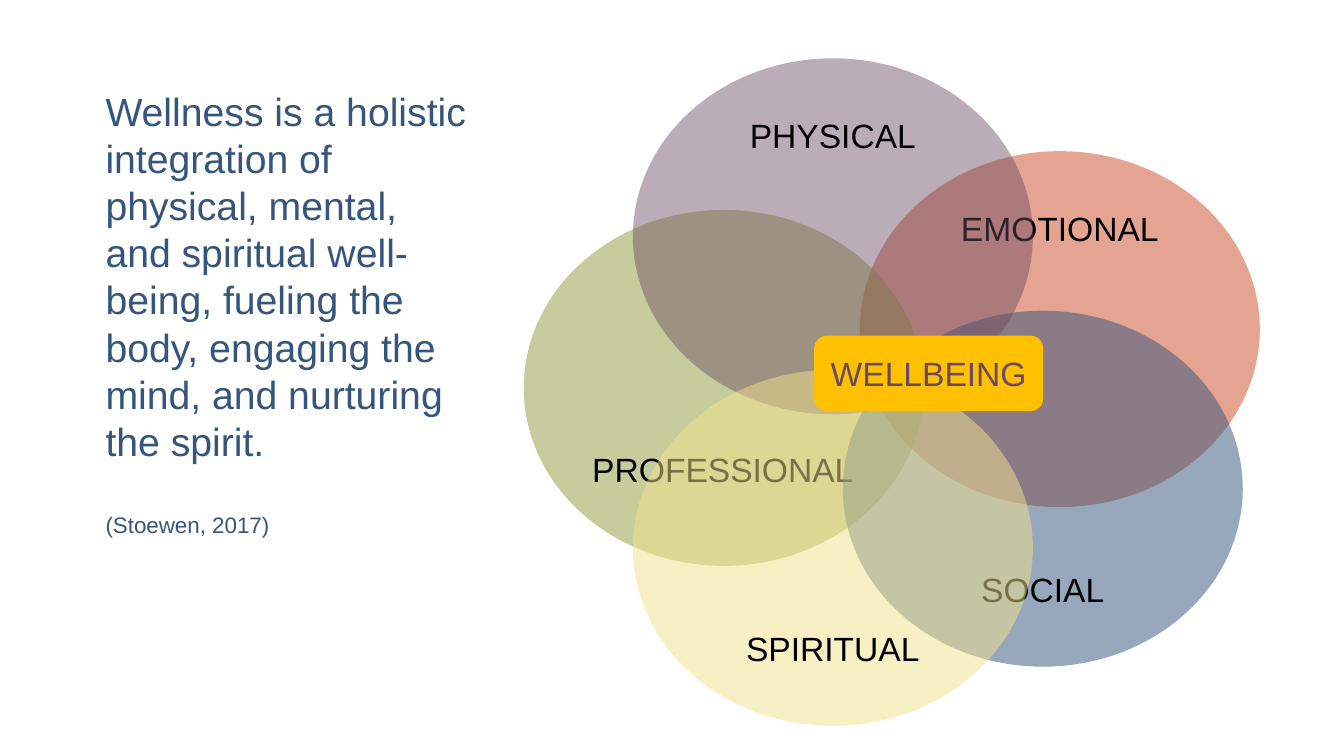
import pptx
import pptx.util
import pptx.dml.color
import pptx.enum.shapes
import pptx.enum.text
import lxml.etree

Cm = pptx.util.Cm
Pt = pptx.util.Pt
RGBColor = pptx.dml.color.RGBColor
MSO_SHAPE = pptx.enum.shapes.MSO_SHAPE
ANCHOR = pptx.enum.text.MSO_ANCHOR
ALIGN = pptx.enum.text.PP_ALIGN

BLACK = RGBColor(0x00, 0x00, 0x00)
RED = RGBColor(0xCC, 0x49, 0x27)
GREEN = RGBColor(0x90, 0x9A, 0x3B)
BLUE = RGBColor(0x36, 0x55, 0x7C)
PLUM = RGBColor(0x6A, 0x4A, 0x62)
YELLOW = RGBColor(0xF2, 0xE2, 0x8C)
AMBER = RGBColor(0xFF, 0xC0, 0x00)


def format_text(p, size, color, align):
    p.alignment = align
    for r in p.runs:
        r.font.name = "Arial"
        r.font.size = Pt(size)
        r.font.color.rgb = color


def add_label(kind, left, top, width, height, fill, text, color, anchor, align):
    sp = s.shapes.add_shape(kind, Cm(left), Cm(top), Cm(width), Cm(height))
    sp.shadow.inherit = False
    sp.fill.solid()
    sp.fill.fore_color.rgb = fill
    sp.line.fill.background()
    tf = sp.text_frame
    tf.word_wrap = True
    tf.vertical_anchor = anchor
    tf.text = text
    format_text(tf.paragraphs[0], 24, color, align)
    return sp


prs = pptx.Presentation()
prs.slide_width = Cm(33.87)
prs.slide_height = Cm(19.05)
s = prs.slides.add_slide(prs.slide_layouts[6])

dimensions = [
    ("EMOTIONAL", 21.67, 3.81, RED, 50, ANCHOR.TOP, ALIGN.CENTER),
    ("PROFESSIONAL", 13.2, 5.29, GREEN, 50, ANCHOR.BOTTOM, ALIGN.LEFT),
    ("SOCIAL", 21.24, 7.83, BLUE, 51, ANCHOR.BOTTOM, ALIGN.CENTER),
    ("PHYSICAL", 15.95, 1.47, PLUM, 45, ANCHOR.TOP, ALIGN.CENTER),
    ("SPIRITUAL", 15.95, 9.32, YELLOW, 50, ANCHOR.BOTTOM, ALIGN.CENTER),
]
for name, left, top, fill, opacity, anchor, align in dimensions:
    sp = add_label(MSO_SHAPE.OVAL, left, top, 10.08, 8.97, fill, name, BLACK, anchor, align)
    color = sp.fill._xPr.find(".//" + pptx.oxml.ns.qn("a:srgbClr"))
    lxml.etree.SubElement(color, pptx.oxml.ns.qn("a:alpha"), val=str(opacity * 1000))
    if name == "PROFESSIONAL":
        sp.text_frame.margin_bottom = Cm(0.63)

add_label(MSO_SHAPE.ROUNDED_RECTANGLE, 20.52, 8.46, 5.77, 1.9, AMBER,
          "WELLBEING", PLUM, ANCHOR.MIDDLE, ALIGN.CENTER)

tb = s.shapes.add_textbox(Cm(2.41), Cm(2.08), Cm(9.75), Cm(11.71))
tf = tb.text_frame
tf.word_wrap = True
tf.text = (
    "Wellness is a holistic integration of physical, mental, and spiritual "
    "well-being, fueling the body, engaging the mind, and nurturing the spirit."
)
format_text(tf.paragraphs[0], 28, BLUE, ALIGN.LEFT)
p = tf.add_paragraph()
p.text = "(Stoewen, 2017)"
p.space_before = Pt(33.6)
format_text(p, 16, BLUE, ALIGN.LEFT)

prs.save("out.pptx")
